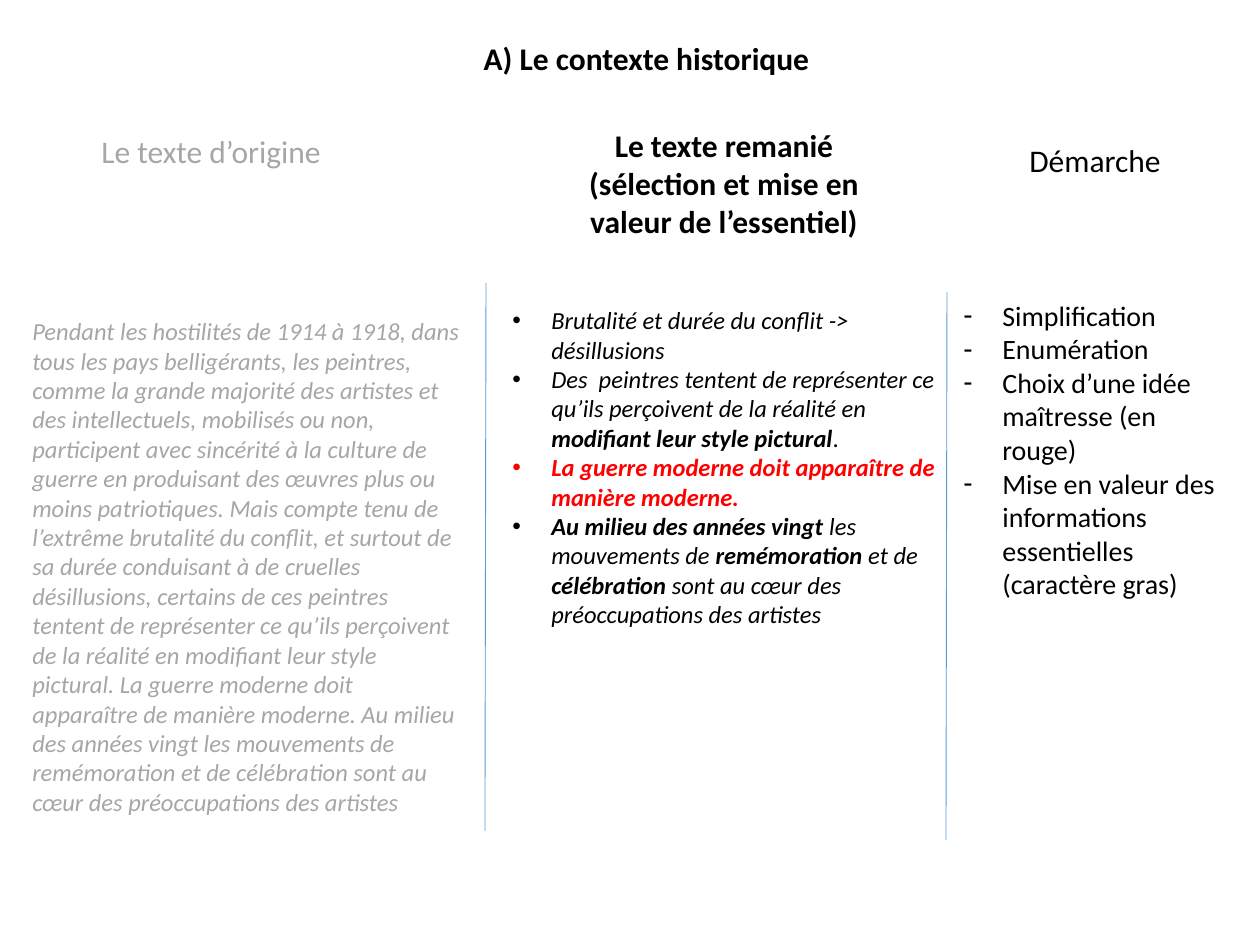
"""Build the slide comparing the source text, its reworked version and the method."""
from dataclasses import dataclass

from lxml.etree import SubElement
from pptx import Presentation
from pptx.dml.color import RGBColor
from pptx.enum.shapes import MSO_CONNECTOR as CONN
from pptx.enum.text import MSO_ANCHOR as ANCHOR, MSO_AUTO_SIZE as AUTO, PP_ALIGN as ALIGN
from pptx.oxml.ns import qn
from pptx.util import Emu, Pt


@dataclass(frozen=True)
class Theme:
    font: str = "Calibri"
    black: str = "000000"
    grey: str = "A6A6A6"
    red: str = "FF0000"
    rule: str = "5B9BD5"
    heading: int = 18
    method: int = 16
    body: int = 14
    hairline: float = 0.5


T = Theme()


def px(n):
    return Emu(round(n * 914400 / 126))


def write(sp, paragraphs, size=T.heading, color=T.black, bold=False, italic=False,
          align=ALIGN.LEFT, wrap=True, bullet=None):
    tf = sp.text_frame
    tf.word_wrap = wrap
    tf.auto_size = AUTO.SHAPE_TO_FIT_TEXT
    tf.vertical_anchor = ANCHOR.TOP
    for i, runs in enumerate(paragraphs):
        p = tf.add_paragraph() if i else tf.paragraphs[0]
        p.alignment = align
        if bullet:
            pPr = p._p.get_or_add_pPr()
            pPr.set("marL", str(px(39)))
            pPr.set("indent", str(-px(39)))
            SubElement(pPr, qn("a:buFont"), typeface="Arial")
            SubElement(pPr, qn("a:buChar"), char=bullet)
        for text, *style in runs:
            r = p.add_run()
            r.text = text
            f = r.font
            f.name, f.size, f.italic = T.font, Pt(size), italic
            f.bold = bold or "bold" in style
            f.color.rgb = RGBColor.from_string(T.red if "red" in style else color)


prs = Presentation()
prs.slide_width, prs.slide_height = px(1260), px(945)
s = prs.slides.add_slide(prs.slide_layouts[5])

title = s.shapes.title
title.left, title.top, title.width, title.height = px(471), px(33), px(354), px(50)
write(title, [[("A) Le contexte historique",)]], bold=True, wrap=False)

original = (
    "Pendant les hostilités de 1914 à 1918, dans tous les pays belligérants, les peintres, "
    "comme la grande majorité des artistes et des intellectuels, mobilisés ou non, participent "
    "avec sincérité à la culture de guerre en produisant des œuvres plus ou moins patriotiques. "
    "Mais compte tenu de l’extrême brutalité du conflit, et surtout de sa durée conduisant à de "
    "cruelles désillusions, certains de ces peintres tentent de représenter ce qu’ils perçoivent "
    "de la réalité en modifiant leur style pictural. La guerre moderne doit apparaître de manière "
    "moderne. Au milieu des années vingt les mouvements de remémoration et de célébration sont au "
    "cœur des préoccupations des artistes"
)
reworked = [
    [("Brutalité et durée du conflit -> désillusions",)],
    [("Des  peintres tentent de représenter ce qu’ils perçoivent de la réalité en ",),
     ("modifiant leur style pictural", "bold"), (".",)],
    [("La guerre moderne doit apparaître de manière moderne.", "bold", "red")],
    [("Au milieu des années vingt", "bold"), (" les mouvements de ",),
     ("remémoration", "bold"), (" et de ",), ("célébration", "bold"),
     (" sont au cœur des préoccupations des artistes",)],
]
method = [
    [("Simplification",)],
    [("Enumération",)],
    [("Choix d’une idée maîtresse (en rouge)",)],
    [("Mise en valeur des informations essentielles (caractère gras)",)],
]
reworked_heading = "Le texte remanié (sélection et mise en valeur de l’essentiel)"

boxes = [
    ((89, 126, 248, 50), [[("Le texte d’origine",)]], dict(color=T.grey, wrap=False)),
    ((546, 120, 356, 127), [[(reworked_heading,)]], dict(bold=True, align=ALIGN.CENTER)),
    ((1017, 135, 159, 50), [[("Démarche",)]], dict(wrap=False)),
    ((20, 310, 456, 518), [[(original,)]], dict(size=T.body, color=T.grey, italic=True)),
    ((500, 299, 456, 339), reworked, dict(size=T.body, italic=True, bullet="•")),
    ((951, 292, 297, 352), method, dict(size=T.method, bullet="-")),
]
for frame, paragraphs, style in boxes:
    write(s.shapes.add_textbox(*map(px, frame)), paragraphs, **style)

for x, y in [(486, 283), (947, 292)]:
    rule = s.shapes.add_connector(CONN.STRAIGHT, px(x), px(y), px(x - 1), px(y + 548))
    rule.line.color.rgb = RGBColor.from_string(T.rule)
    rule.line.width = Pt(T.hairline)
    SubElement(rule._element.spPr, qn("a:effectLst"))

prs.save("out.pptx")
